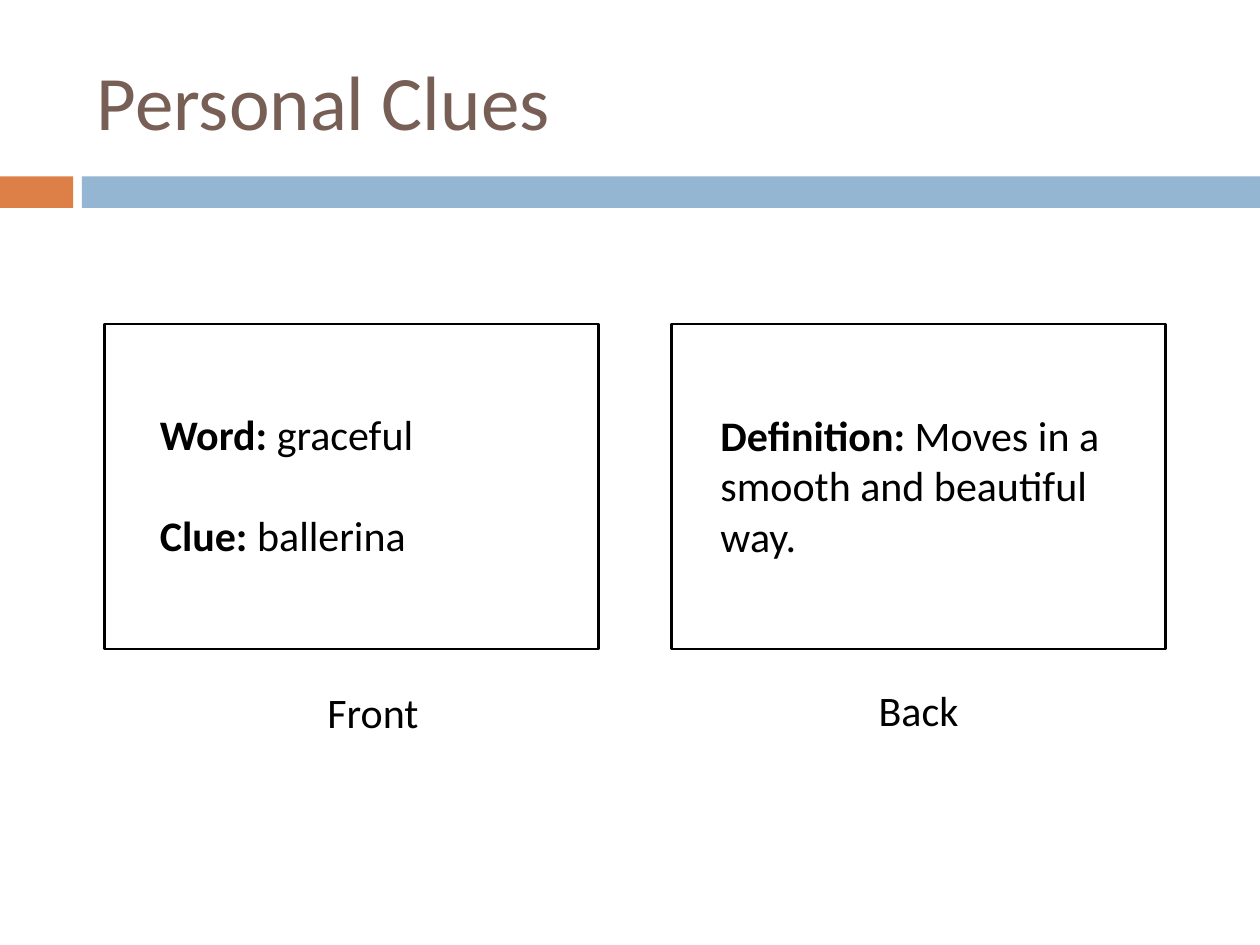
import pptx
import pptx.dml.color
import pptx.enum.shapes
import pptx.enum.text
import pptx.util

Inches = pptx.util.Inches
Pt = pptx.util.Pt
ALIGN = pptx.enum.text.PP_ALIGN
ANCHOR = pptx.enum.text.MSO_ANCHOR

COLORS = {
    "accent": "DD8047",
    "band": "94B6D2",
    "title": "775F55",
    "ink": "000000",
}


class SlideBuilder:
    font = "Calibri"
    body_size = 24

    def __init__(self, prs):
        self.s = prs.slides.add_slide(prs.slide_layouts[6])

    def color(self, name):
        return pptx.dml.color.RGBColor.from_string(COLORS[name])

    def rect(self, box, fill=None, line=None):
        kind = pptx.enum.shapes.MSO_SHAPE.RECTANGLE
        sp = self.s.shapes.add_shape(kind, *map(Inches, box))
        sp.shadow.inherit = False
        if fill:
            sp.fill.solid()
            sp.fill.fore_color.rgb = self.color(fill)
        else:
            sp.fill.background()
        if line:
            sp.line.color.rgb = self.color(line)
            sp.line.width = Pt(1.5)
        else:
            sp.line.fill.background()

    def text(self, box, paragraphs, size=body_size, color="ink",
             align=ALIGN.LEFT, anchor=ANCHOR.TOP, gap=0):
        tf = self.s.shapes.add_textbox(*map(Inches, box)).text_frame
        tf.word_wrap = True
        tf.vertical_anchor = anchor
        for i, runs in enumerate(paragraphs):
            p = tf.add_paragraph() if i else tf.paragraphs[0]
            p.alignment = align
            p.space_before = Pt(gap if i else 0)
            for content, bold in runs:
                r = p.add_run()
                r.text = content
                style = {"name": self.font, "size": Pt(size), "bold": bold}
                for key, value in style.items():
                    setattr(r.font, key, value)
                r.font.color.rgb = self.color(color)

    def card(self, left, text_box, entries, label, label_box):
        self.rect((left, 2.57, 3.92, 2.58), line="ink")
        paragraphs = [[(f"{term}: ", True), (content, False)]
                      for term, content in entries]
        self.text(text_box, paragraphs, gap=29.3)
        self.text(label_box, [[(label, False)]], align=ALIGN.CENTER)


def main():
    prs = pptx.Presentation()
    prs.slide_width, prs.slide_height = Inches(10), Inches(7.5)
    slide = SlideBuilder(prs)
    slide.rect((0, 1.4, 0.58, 0.25), fill="accent")
    slide.rect((0.65, 1.4, 9.35, 0.25), fill="band")
    slide.text((0.67, 0.25, 8.92, 1.08), [[("Personal Clues", False)]],
               size=44, color="title", anchor=ANCHOR.MIDDLE)
    slide.card(0.83, (1.17, 3.19, 3.33, 1.31),
               [("Word", "graceful"), ("Clue", "ballerina")],
               "Front", (1.92, 5.4, 2.08, 0.5))
    slide.card(5.33, (5.62, 3.2, 3.33, 1.31),
               [("Definition", "Moves in a smooth and beautiful way.")],
               "Back", (6.25, 5.38, 2.08, 0.5))
    prs.save("out.pptx")


if __name__ == "__main__":
    main()
